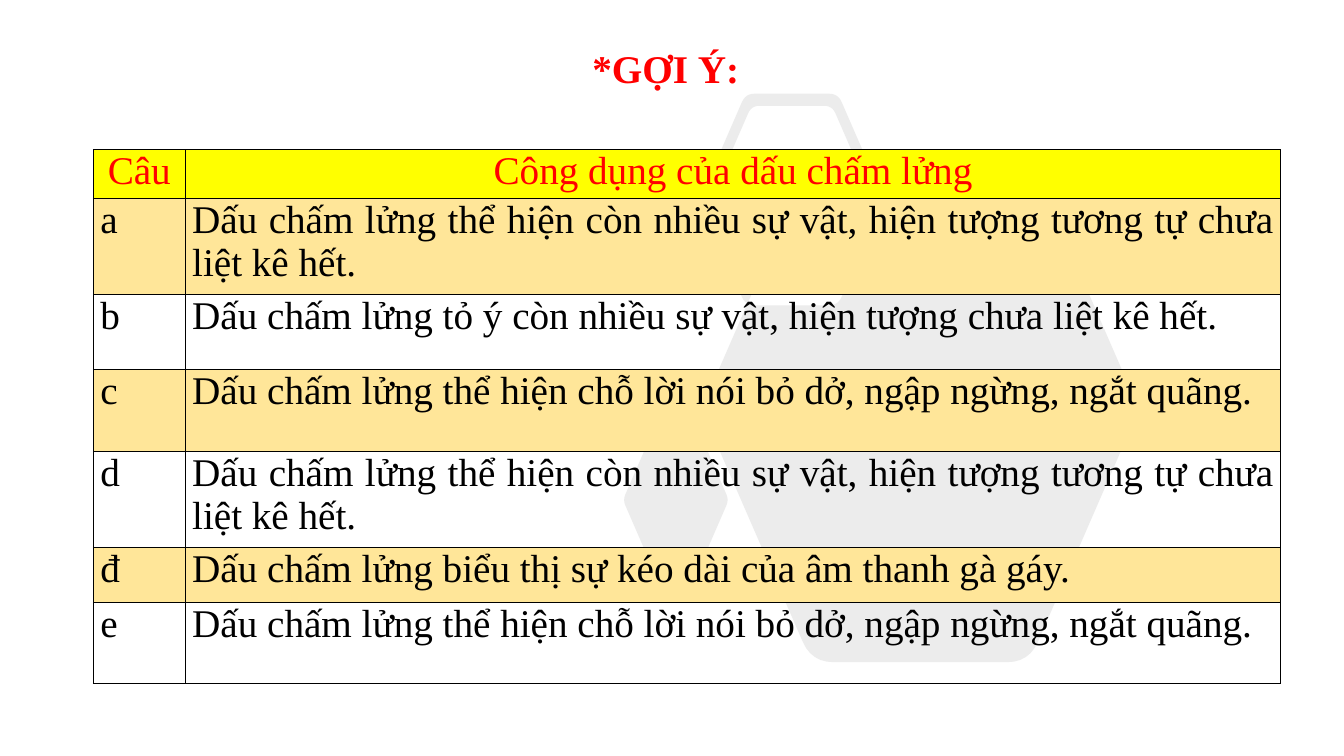
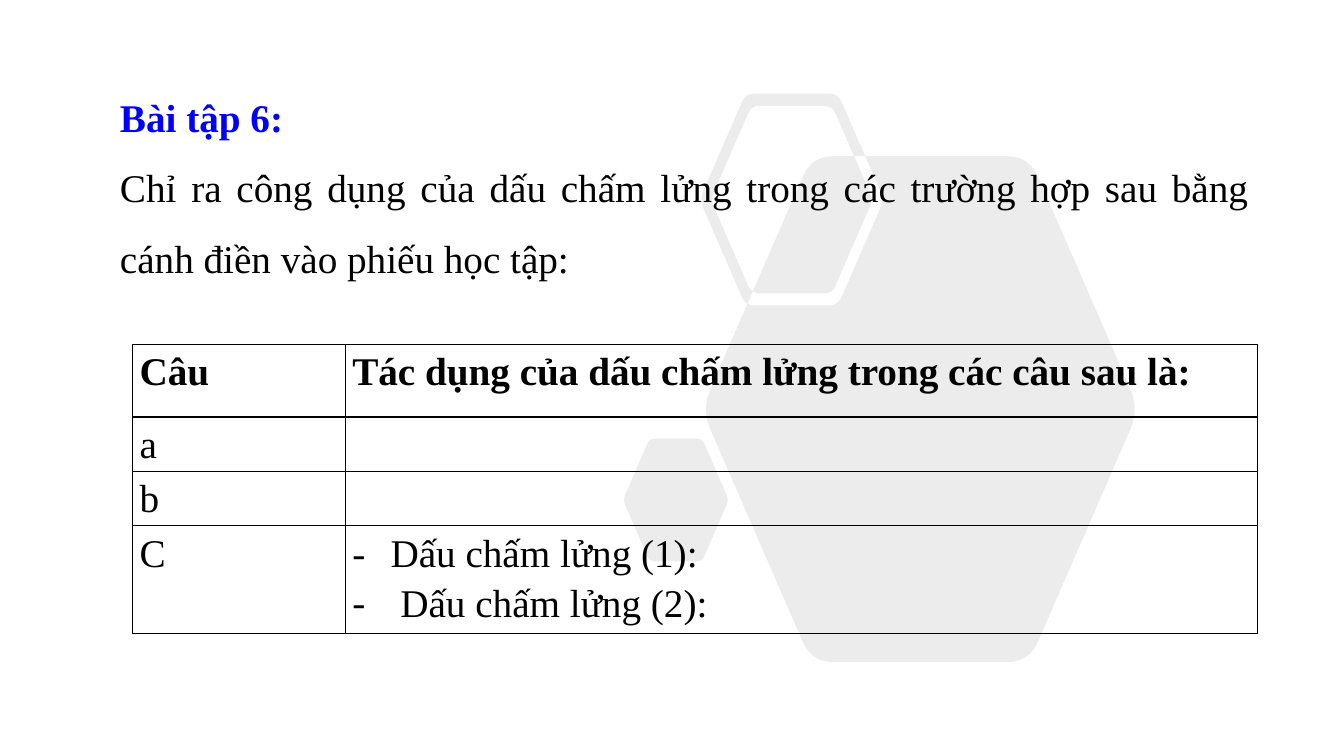
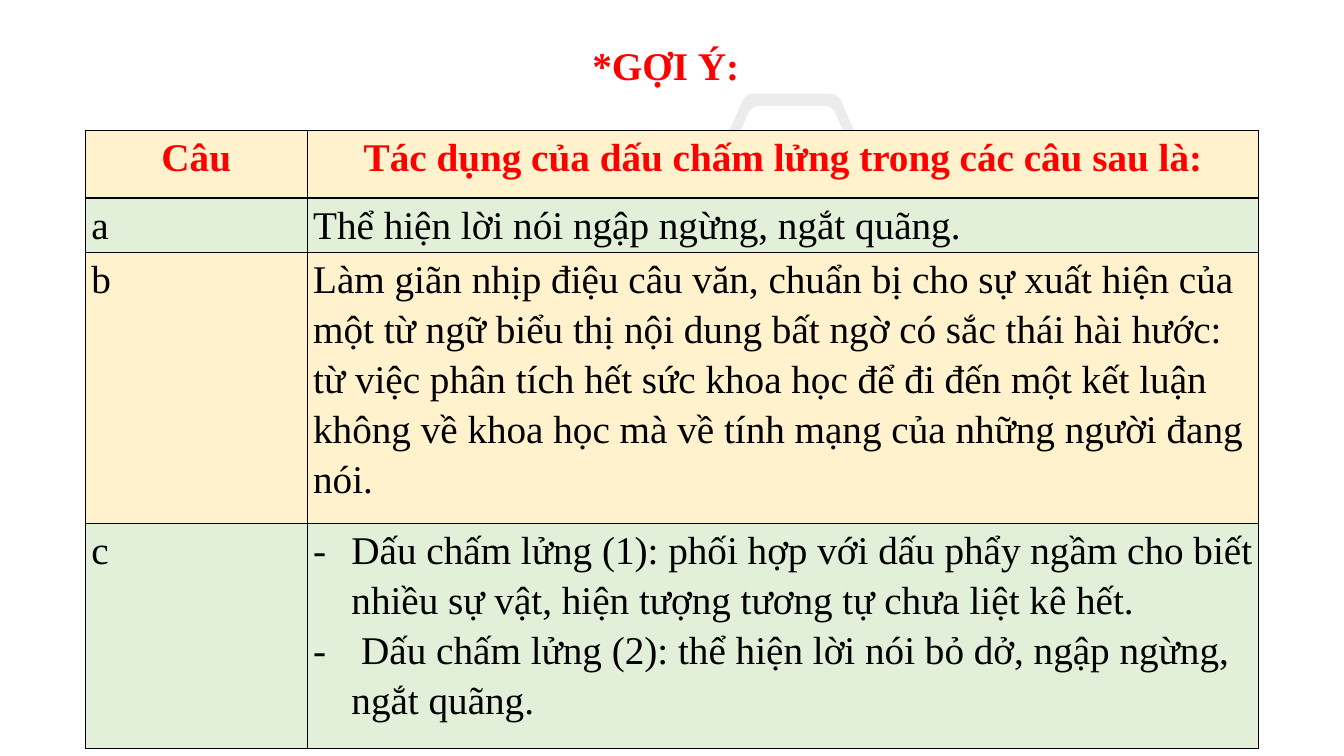
from dataclasses import dataclass
from math import hypot

from lxml.etree import SubElement
from pptx import Presentation
from pptx.dml.color import RGBColor
from pptx.enum.text import MSO_ANCHOR as Anchor, MSO_AUTO_SIZE as AutoSize, PP_ALIGN as Align
from pptx.oxml.ns import qn
from pptx.util import Inches, Pt

FONT = "Times New Roman"
SIZE = 28
BLACK, RED, BLUE = "000000", "FF0000", "0000FF"
YELLOW, AMBER, CREAM, GREEN, GREY = "FFFF00", "FFE699", "FFF2CC", "E2F0D9", "808080"
COLUMNS, ROWS = 133.33, 75
TITLE_ONLY, TITLE_AND_BODY = 5, 1
DASH_INDENT = 3.8
HEXAGON_SLANT = 0.435
HEXAGONS = [
    (61.8, 43.5, 10.5, 12.2, 0.6),
    (69.6, 15.5, 43.4, 50.2, 2.2),
    (69.4, 9.3, 18.3, 21, 0.9),
    (70.5, 10.5, 16.1, 18.6, 0.8),
]
VOWELS = "aăâeêioôơuưy"
TONED_VOWELS = {
    0x300: "àằầèềìòồờùừỳ",
    0x301: "áắấéếíóốớúứý",
    0x303: "ãẵẫẽễĩõỗỡũữỹ",
    0x309: "ảẳẩẻểỉỏổởủửỷ",
    0x323: "ạặậẹệịọộợụựỵ",
}
TONE_SPLITS = {ord(toned): vowel + chr(mark)
               for mark, letters in TONED_VOWELS.items()
               for vowel, toned in zip(VOWELS, letters)}


@dataclass
class TableStyle:
    """Look of a table: header text, body alignment, spacing, margin and tone marks."""
    header_color: str
    header_bold: bool
    header_align: Align
    body_align: Align = Align.LEFT
    spacing: float = 1.15
    margin: float = 0.7
    split_tones: bool = False


def grid(cells):
    """Convert grid cells, ten to the inch, to a length."""
    return Inches(cells / 10)


def color(hex_string):
    """Return the colour of a hex string."""
    return RGBColor.from_string(hex_string)


def write(paragraph, text, text_color=BLACK, bold=False, align=Align.LEFT, spacing=1.0):
    """Add one formatted run to a paragraph."""
    paragraph.alignment = align
    paragraph.line_spacing = spacing
    paragraph.space_before = Pt(0)
    run = paragraph.add_run()
    run.text = text
    font = run.font
    font.name, font.size, font.bold = FONT, Pt(SIZE), bold
    font.color.rgb = color(text_color)


def set_bullet(paragraph, dash):
    """Give a paragraph a hanging dash, or take its bullet away."""
    properties = paragraph._p.get_or_add_pPr()
    indent = grid(DASH_INDENT) if dash else 0
    properties.set("marL", str(indent))
    properties.set("indent", str(-indent))
    if dash:
        SubElement(properties, qn("a:buFont")).set("typeface", FONT)
        SubElement(properties, qn("a:buChar")).set("char", "-")
    else:
        SubElement(properties, qn("a:buNone"))


def hexagon_points(left, top, width, height, cut, steps=6):
    """Return the outline of a hexagon with rounded corners."""
    inset = HEXAGON_SLANT * height / 2
    right, middle, bottom = left + width, top + height / 2, top + height
    corners = [(left + inset, top), (right - inset, top), (right, middle),
               (right - inset, bottom), (left + inset, bottom), (left, middle)]

    def toward(start, end):
        share = cut / hypot(end[0] - start[0], end[1] - start[1])
        return [a + (b - a) * share for a, b in zip(start, end)]

    points = []
    for index, corner in enumerate(corners):
        before = toward(corner, corners[index - 1])
        after = toward(corner, corners[(index + 1) % len(corners)])
        for step in range(steps + 1):
            t = step / steps
            points.append(tuple(
                grid((1 - t) ** 2 * a + 2 * t * (1 - t) * b + t ** 2 * c)
                for a, b, c in zip(before, corner, after)))
    return points


def add_hexagons(slide):
    """Draw the overlapping pale hexagons behind everything else."""
    outlines = [hexagon_points(*hexagon) for hexagon in HEXAGONS]
    builder = slide.shapes.build_freeform(*outlines[0][0])
    for index, points in enumerate(outlines):
        if index:
            builder.move_to(*points[0])
        builder.add_line_segments(points[1:], close=True)
    shape = builder.convert_to_shape()
    shape.shadow.inherit = False
    shape.line.fill.background()
    shape.fill.solid()
    shape.fill.fore_color.rgb = color(GREY)
    fill_color = shape.element.spPr.find(".//" + qn("a:srgbClr"))
    SubElement(fill_color, qn("a:alpha")).set("val", "15000")
    shape.element.getparent().insert(2, shape.element)


def add_slide(presentation, layout):
    """Add a slide with the shared background art."""
    slide = presentation.slides.add_slide(presentation.slide_layouts[layout])
    add_hexagons(slide)
    return slide


def fill_placeholder(shape, box, text, anchor=Anchor.TOP, wrap=True, **style):
    """Move a placeholder to its box and write its text."""
    shape.left, shape.top, shape.width, shape.height = map(grid, box)
    frame = shape.text_frame
    frame.auto_size = AutoSize.NONE
    frame.word_wrap = wrap
    frame.vertical_anchor = anchor
    paragraph = frame.paragraphs[0]
    write(paragraph, text, **style)
    set_bullet(paragraph, dash=False)


def add_hint_title(slide, top):
    """Place the centred red heading of an answer slide."""
    fill_placeholder(slide.shapes.title, (57.7, top, 16.7, 5.7), "*GỢI Ý:", Anchor.MIDDLE,
                     wrap=False, text_color=RED, bold=True, align=Align.CENTER)


def format_cell(cell, fill, margin):
    """Set the borders, fill and margins of a table cell."""
    properties = cell._tc.get_or_add_tcPr()
    for side in ("lnL", "lnR", "lnT", "lnB"):
        border = SubElement(properties, qn("a:" + side))
        border.set("w", str(Pt(1)))
        solid = SubElement(border, qn("a:solidFill"))
        SubElement(solid, qn("a:srgbClr")).set("val", BLACK)
    if fill:
        cell.fill.solid()
        cell.fill.fore_color.rgb = color(fill)
    else:
        cell.fill.background()
    cell.margin_left = cell.margin_right = grid(margin)
    cell.margin_top = cell.margin_bottom = 0


def fill_cell(cell, content, style, header):
    """Write a text, or a tuple of dashed items, into a cell."""
    dashed = isinstance(content, tuple)
    for index, text in enumerate(content if dashed else (content,)):
        if not text:
            continue
        frame = cell.text_frame
        paragraph = frame.add_paragraph() if index else frame.paragraphs[0]
        write(paragraph,
              text.translate(TONE_SPLITS) if style.split_tones else text,
              style.header_color if header else BLACK,
              header and style.header_bold,
              style.header_align if header else style.body_align,
              style.spacing)
        if dashed:
            set_bullet(paragraph, dash=True)


def add_answer_table(slide, left, top, widths, rows, fills, style):
    """Place a two-column table; rows are (height, label, content)."""
    height = sum(row[0] for row in rows)
    frame = slide.shapes.add_table(len(rows), len(widths), grid(left), grid(top),
                                   grid(sum(widths)), grid(height))
    table = frame.table
    table.first_row = table.horz_banding = False
    for column, width in zip(table.columns, widths):
        column.width = grid(width)
    for index, (row_height, *contents) in enumerate(rows):
        table.rows[index].height = grid(row_height)
        for cell, content in zip(table.rows[index].cells, contents):
            format_cell(cell, fills[index], style.margin)
            fill_cell(cell, content, style, header=index == 0)


def build_ellipsis_answers(presentation):
    """Build the slide with the uses of the ellipsis, a to e."""
    slide = add_slide(presentation, TITLE_ONLY)
    add_hint_title(slide, 3.9)
    listing = "Dấu chấm lửng thể hiện còn nhiều sự vật, hiện tượng tương tự chưa liệt kê hết."
    pausing = "Dấu chấm lửng thể hiện chỗ lời nói bỏ dở, ngập ngừng, ngắt quãng."
    rows = [
        (4.8, "Câu", "Công dụng của dấu chấm lửng"),
        (9.6, "a", listing),
        (7.4, "b", "Dấu chấm lửng tỏ ý còn nhiều sự vật, hiện tượng chưa liệt kê hết."),
        (8.1, "c", pausing),
        (9.6, "d", listing),
        (5.4, "đ", "Dấu chấm lửng biểu thị sự kéo dài của âm thanh gà gáy."),
        (8.1, "e", pausing),
    ]
    style = TableStyle(RED, False, Align.CENTER, Align.JUSTIFY, spacing=1.0, split_tones=True)
    add_answer_table(slide, 9.27, 14.86, (9.1, 108.7), rows, [YELLOW] + [AMBER, None] * 3, style)


def build_exercise(presentation):
    """Build the exercise slide with its blank worksheet."""
    slide = add_slide(presentation, TITLE_AND_BODY)
    left, width = 10.9, 113.9
    fill_placeholder(slide.shapes.title, (left, 6.4, width, 7), "Bài tập 6:",
                     text_color=BLUE, bold=True, align=Align.JUSTIFY, spacing=1.5)
    fill_placeholder(slide.placeholders[1], (left, 13.4, width, 14.4),
                     "Chỉ ra công dụng của dấu chấm lửng trong các trường hợp sau bằng "
                     "cánh điền vào phiếu học tập:", align=Align.JUSTIFY, spacing=1.5)
    rows = [
        (7.2, "Câu", "Tác dụng của dấu chấm lửng trong các câu sau là:"),
        (5.4, "a", ""),
        (5.4, "b", ""),
        (10.7, "C", ("Dấu chấm lửng (1):", " Dấu chấm lửng (2):")),
    ]
    style = TableStyle(BLACK, True, Align.LEFT)
    add_answer_table(slide, 13.15, 34.17, (21.1, 90.5), rows, [None] * 4, style)


def build_exercise_answers(presentation):
    """Build the slide with the answers to the exercise."""
    slide = add_slide(presentation, TITLE_ONLY)
    add_hint_title(slide, 3.6)
    rows = [
        (6.7, "Câu", "Tác dụng của dấu chấm lửng trong các câu sau là:"),
        (5.4, "a", "Thể hiện lời nói ngập ngừng, ngắt quãng."),
        (26.9, "b", "Làm giãn nhịp điệu câu văn, chuẩn bị cho sự xuất hiện của một từ ngữ "
                    "biểu thị nội dung bất ngờ có sắc thái hài hước: từ việc phân tích hết sức "
                    "khoa học để đi đến một kết luận không về khoa học mà về tính mạng của "
                    "những người đang nói."),
        (22.3, "c", ("Dấu chấm lửng (1): phối hợp với dấu phẩy ngầm cho biết nhiều sự vật, "
                     "hiện tượng tương tự chưa liệt kê hết.",
                     " Dấu chấm lửng (2): thể hiện lời nói bỏ dở, ngập ngừng, ngắt quãng.")),
    ]
    style = TableStyle(RED, True, Align.CENTER, margin=0.6)
    add_answer_table(slide, 8.47, 12.95, (22, 94.4), rows, [CREAM, GREEN] * 2, style)


def main():
    """Build and save the presentation."""
    presentation = Presentation()
    presentation.slide_width, presentation.slide_height = grid(COLUMNS), grid(ROWS)
    build_ellipsis_answers(presentation)
    build_exercise(presentation)
    build_exercise_answers(presentation)
    presentation.save("out.pptx")


if __name__ == "__main__":
    main()
